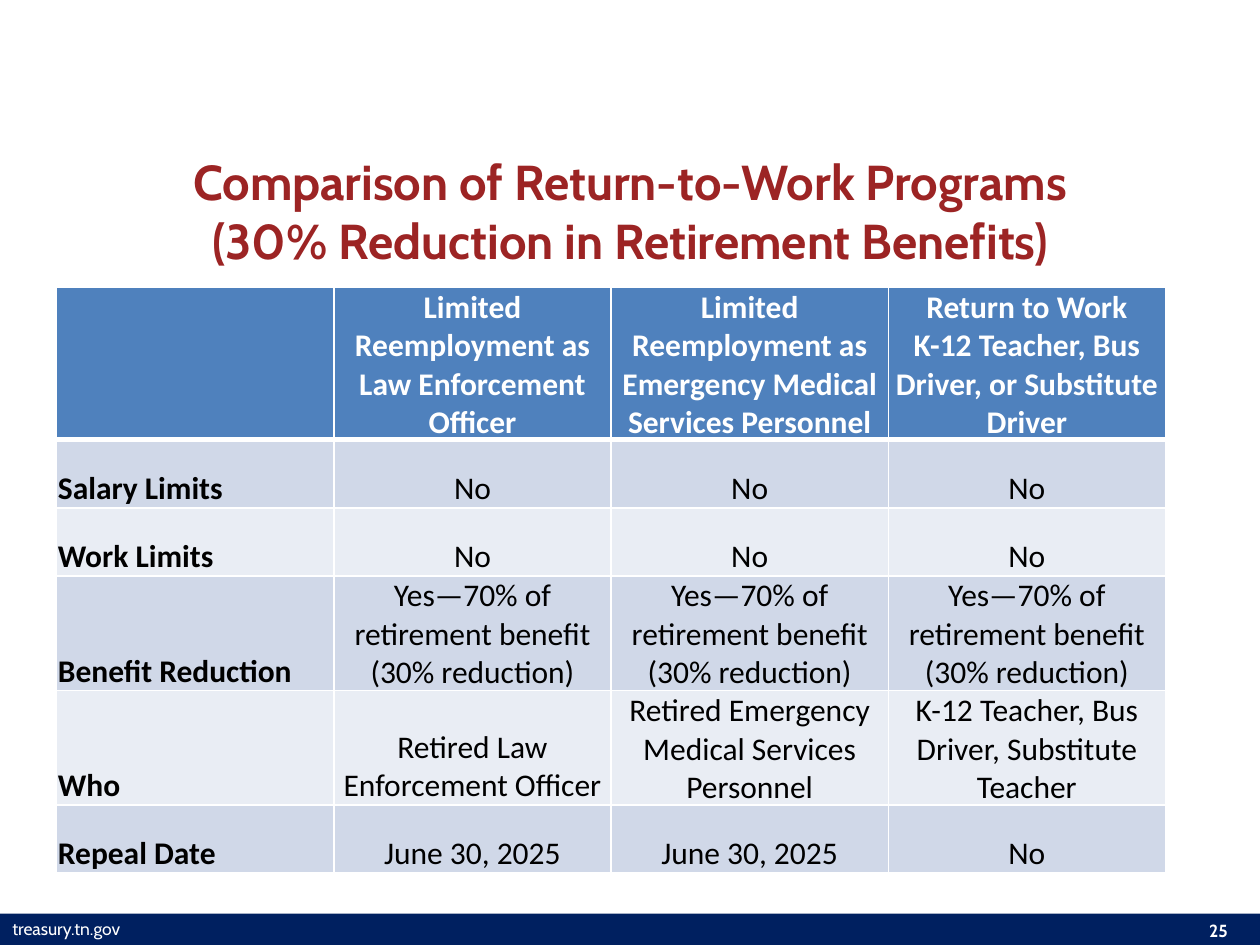
from lxml import etree
from pptx import Presentation
from pptx.dml.color import RGBColor
from pptx.enum.shapes import MSO_SHAPE
from pptx.enum.text import MSO_ANCHOR, MSO_AUTO_SIZE, PP_ALIGN
from pptx.oxml.ns import qn
from pptx.util import Inches, Pt

RECT = MSO_SHAPE.RECTANGLE
TOP, MIDDLE, BOTTOM = MSO_ANCHOR.TOP, MSO_ANCHOR.MIDDLE, MSO_ANCHOR.BOTTOM
LEFT, CENTER = PP_ALIGN.LEFT, PP_ALIGN.CENTER
GROW, FIXED = MSO_AUTO_SIZE.SHAPE_TO_FIT_TEXT, MSO_AUTO_SIZE.NONE

COLORS = {
    "navy": "002060", "red": "9C2424", "white": "FFFFFF", "black": "000000",
    "head": "4F81BD", "odd": "D0D8E8", "even": "E9EDF4",
}
CUT = "Yes—70% of retirement benefit (30% reduction)"
ROWS = [
    ["", "Limited Reemployment as Law Enforcement Officer",
     "Limited Reemployment as Emergency Medical Services Personnel",
     "Return to Work\nK-12 Teacher, Bus Driver, or Substitute Driver"],
    ["Salary Limits"] + ["No"] * 3,
    ["Work Limits"] + ["No"] * 3,
    ["Benefit Reduction"] + [CUT] * 3,
    ["Who", "Retired Law Enforcement Officer",
     "Retired Emergency Medical Services Personnel",
     "K-12 Teacher, Bus Driver, Substitute Teacher"],
    ["Repeal Date", "June 30, 2025", "June 30, 2025", "No"],
]
HEIGHTS = [1.01, 0.54, 0.54, 0.76, 0.76, 0.54]


def color(name):
    return RGBColor.from_string(COLORS[name])


def write(frame, text, size=18, font="Calibri", tint="black", bold=False, align=LEFT):
    para = frame.paragraphs[0]
    para.text = text
    para.alignment = align
    for run in para.runs:
        run.font.size = Pt(size)
        run.font.name = font
        run.font.bold = bold
        run.font.color.rgb = color(tint)


def border(cell, low):
    props = cell._tc.get_or_add_tcPr()
    sides = [("a:lnL", 1), ("a:lnR", 1), ("a:lnT", 1), ("a:lnB", low)]
    for spot, (tag, width) in enumerate(sides):
        line = etree.Element(qn(tag), w=str(Pt(width)))
        fill = etree.SubElement(line, qn("a:solidFill"))
        etree.SubElement(fill, qn("a:srgbClr"), val=COLORS["white"])
        props.insert(spot, line)


class Deck:
    """Holds the font style and the current slide."""

    def __init__(self, slide, font="Cabin"):
        self.shapes = slide.shapes
        self.font = font

    def bar(self, box, tint):
        shape = self.shapes.add_shape(RECT, *map(Inches, box))
        shape.shadow.inherit = False
        shape.fill.solid()
        shape.fill.fore_color.rgb = color(tint)
        shape.line.fill.background()

    def text(self, box, text, anchor=TOP, fit=GROW, **style):
        frame = self.shapes.add_textbox(*map(Inches, box)).text_frame
        frame.word_wrap = True
        frame.auto_size = fit
        frame.vertical_anchor = anchor
        write(frame, text, font=self.font, **style)

    def table(self, box, rows, heights):
        holder = self.shapes.add_table(len(rows), len(rows[0]), *map(Inches, box))
        table = holder.table
        for r, (row, height) in enumerate(zip(rows, heights)):
            table.rows[r].height = Inches(height)
            for c, text in enumerate(row):
                self.cell(table.cell(r, c), text, r, c)
        holder.height = Inches(box[3])

    def cell(self, cell, text, r, c):
        head = r == 0
        cell.fill.solid()
        cell.fill.fore_color.rgb = color("head" if head else "odd" if r % 2 else "even")
        cell.vertical_anchor = BOTTOM
        cell.margin_left = cell.margin_right = cell.margin_top = Inches(0.01)
        cell.margin_bottom = 0
        border(cell, 3 if head else 1)
        if text:
            write(cell.text_frame, text, tint="white" if head else "black",
                  bold=head or c == 0, align=CENTER if c else LEFT)


def main():
    show = Presentation()
    show.slide_width, show.slide_height = Inches(10), Inches(7.5)
    deck = Deck(show.slides.add_slide(show.slide_layouts[6]))
    deck.bar((-0.16, 7.25, 10.25, 0.25), "navy")
    deck.text((0, 7.24, 1.83, 0.27), "treasury.tn.gov", size=10, tint="white")
    deck.text((9.42, 7.25, 0.5, 0.27), "25", size=10, tint="white",
              bold=True, align=CENTER)
    deck.text((0.5, 1.17, 9, 1),
              "Comparison of Return-to-Work Programs\n"
              "(30% Reduction in Retirement Benefits)",
              anchor=MIDDLE, fit=FIXED, size=28, tint="red", bold=True, align=CENTER)
    deck.table((0.45, 2.28, 8.8, 4.64), ROWS, HEIGHTS)
    show.save("out.pptx")


if __name__ == "__main__":
    main()
